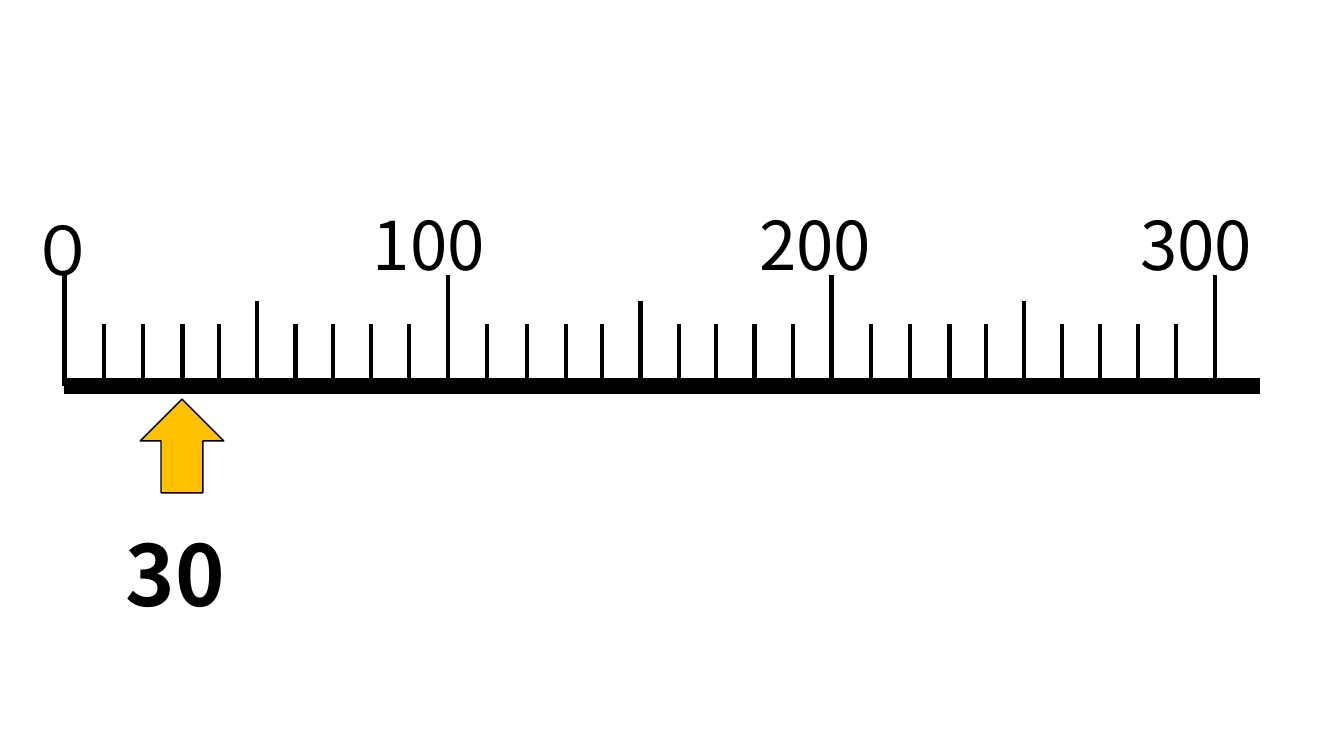
from dataclasses import dataclass

import pptx
import pptx.dml.color
import pptx.enum.shapes
import pptx.enum.text
import pptx.oxml.ns
import pptx.util
from lxml import etree
from pptx.slide import Slide
from pptx.util import Inches

BLACK = pptx.dml.color.RGBColor(0x00, 0x00, 0x00)
AMBER = pptx.dml.color.RGBColor(0xFF, 0xC0, 0x00)
FONT = "Noto Sans CJK JP"

# Scale geometry in inches
AXIS_Y = 3.83
SCALE_LEFT = 0.64
SCALE_RIGHT = 12.05
HUNDREDS = 3
HUNDRED_WIDTH = (SCALE_RIGHT - SCALE_LEFT) / HUNDREDS
TICK_OFFSETS = (0, 0.39, 0.78, 1.17, 1.53, 1.91, 2.29, 2.66, 3.04, 3.42)
HUNDRED_TOP, FIFTY_TOP, TEN_TOP = 2.73, 2.99, 3.21


@dataclass(frozen=True)
class Label:
    text: str
    left: float
    top: float
    width: float
    height: float = 0.91
    size: int = 48
    bold: bool = False
    wrap: bool = False


LABELS = (
    Label("０", 0.19, 2.02, 0.88),
    Label("100", 3.6, 1.97, 1.46),
    Label("200", 7.43, 1.97, 1.46),
    Label("300", 11.21, 1.97, 1.46),
    Label("30", 1.15, 5.13, 2.09, 1.11, size=60, bold=True, wrap=True),
)


def add_label(slide: Slide, label: Label) -> None:
    box = slide.shapes.add_textbox(
        Inches(label.left), Inches(label.top), Inches(label.width), Inches(label.height)
    )
    text_frame = box.text_frame
    text_frame.word_wrap = label.wrap
    text_frame.auto_size = pptx.enum.text.MSO_AUTO_SIZE.SHAPE_TO_FIT_TEXT
    text_frame.text = label.text
    font = text_frame.paragraphs[0].runs[0].font
    font.name = FONT
    font.size = pptx.util.Pt(label.size)
    font.bold = label.bold
    font.color.rgb = BLACK
    # Full-width digits take the East Asian font
    properties = text_frame.paragraphs[0].runs[0]._r.get_or_add_rPr()
    etree.SubElement(properties, pptx.oxml.ns.qn("a:ea"), typeface=FONT)


def add_line(
    slide: Slide, x1: float, y1: float, x2: float, y2: float, weight: float
) -> None:
    line = slide.shapes.add_connector(
        pptx.enum.shapes.MSO_CONNECTOR.STRAIGHT,
        Inches(x1), Inches(y1), Inches(x2), Inches(y2),
    )
    line.line.color.rgb = BLACK
    line.line.width = pptx.util.Pt(weight)
    etree.SubElement(line._element.spPr, pptx.oxml.ns.qn("a:effectLst"))


def tick_top(step: int) -> float:
    if step % 10 == 0:
        return HUNDRED_TOP
    return FIFTY_TOP if step % 5 == 0 else TEN_TOP


def add_scale(slide: Slide) -> None:
    add_line(slide, 0.63, AXIS_Y, 12.5, AXIS_Y, 12)
    for step in range(HUNDREDS * 10 + 1):
        hundred, ten = divmod(step, 10)
        x = SCALE_LEFT + hundred * HUNDRED_WIDTH + TICK_OFFSETS[ten]
        add_line(slide, x, AXIS_Y, x, tick_top(step), 3)


def add_pointer(slide: Slide) -> None:
    arrow = slide.shapes.add_shape(
        pptx.enum.shapes.MSO_SHAPE.UP_ARROW,
        Inches(1.39), Inches(3.96), Inches(0.83), Inches(0.93),
    )
    arrow.shadow.inherit = False
    arrow.fill.solid()
    arrow.fill.fore_color.rgb = AMBER
    arrow.line.color.rgb = BLACK
    arrow.line.width = pptx.util.Pt(1)


def main() -> None:
    presentation = pptx.Presentation()
    presentation.slide_width = Inches(13.33)
    presentation.slide_height = Inches(7.5)
    slide = presentation.slides.add_slide(presentation.slide_layouts[6])

    # Pointer and number line
    add_pointer(slide)
    add_scale(slide)

    # Scale numbers and the value pointed at
    for label in LABELS:
        add_label(slide, label)

    presentation.save("out.pptx")


if __name__ == "__main__":
    main()
